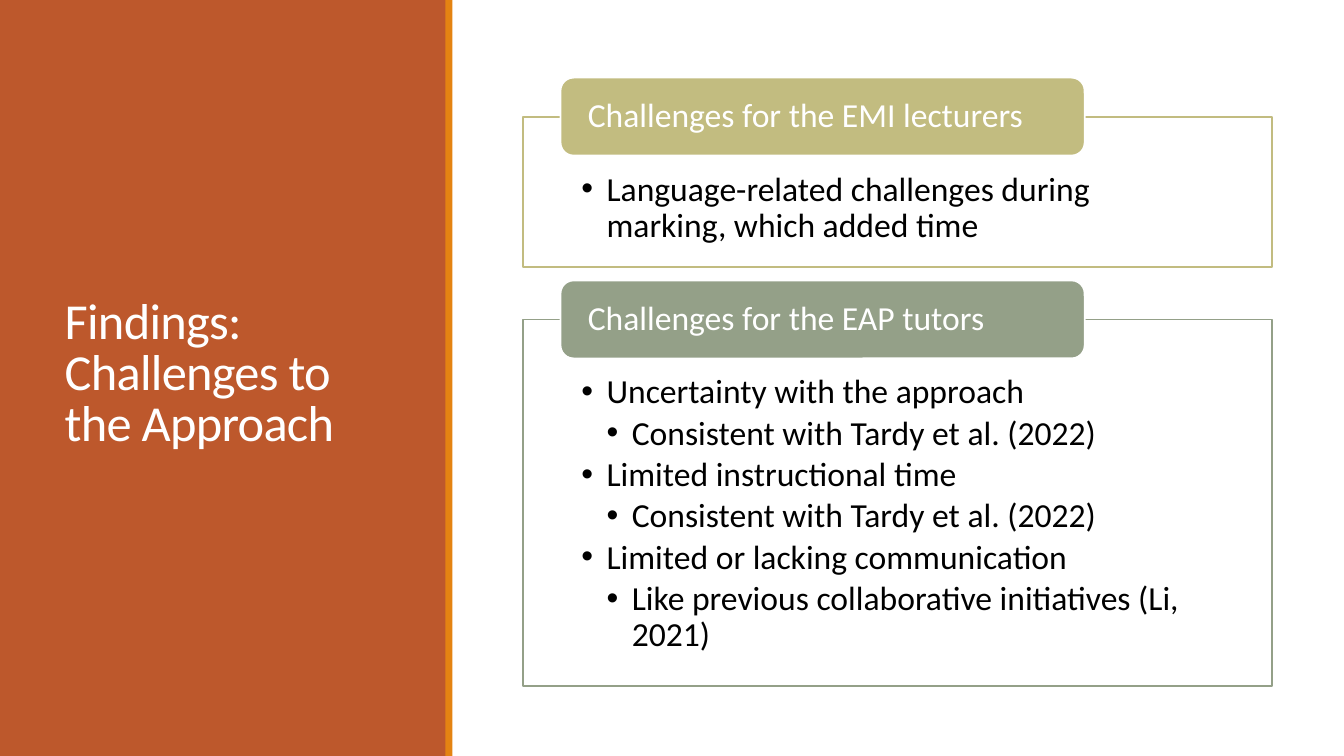
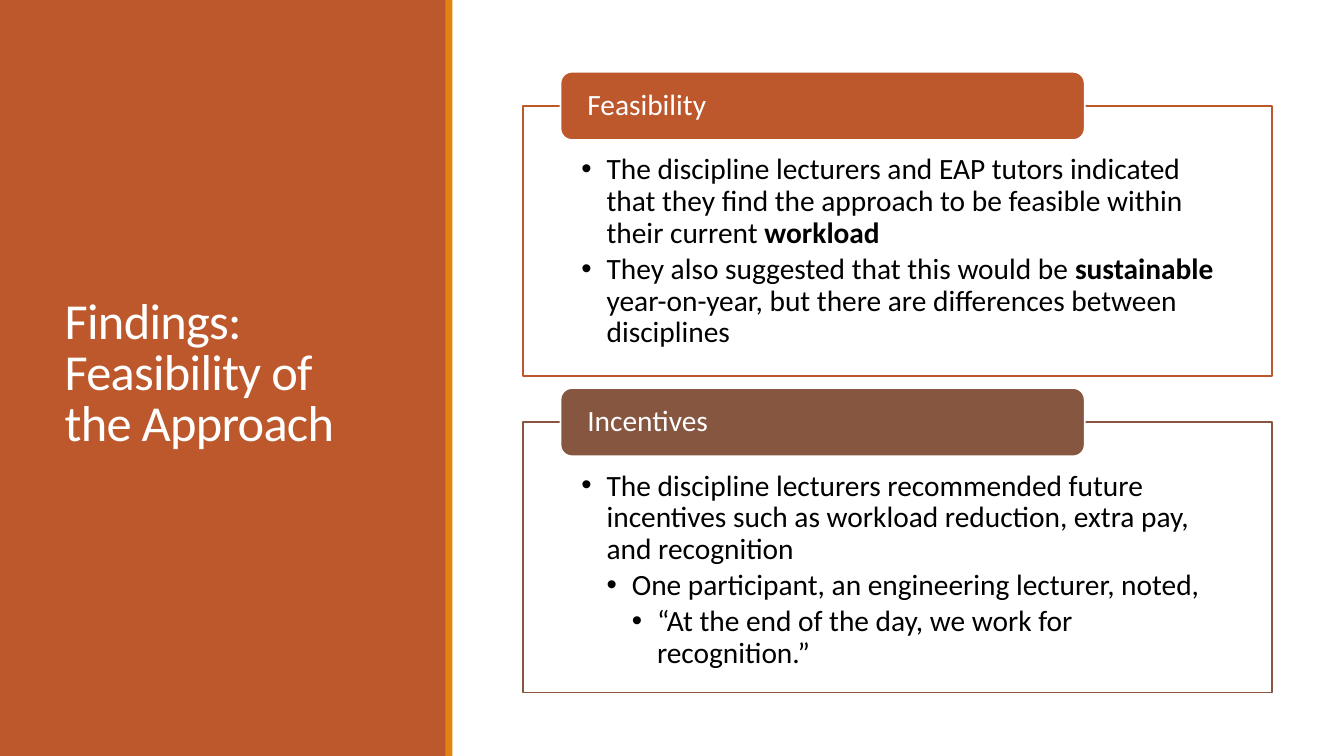
import pptx
import pptx.dml.color
import pptx.enum.shapes
import pptx.enum.text
import pptx.oxml.ns
import pptx.util
from lxml import etree

Pt = pptx.util.Pt
RGBColor = pptx.dml.color.RGBColor
SHAPES = pptx.enum.shapes.MSO_SHAPE
ANCHOR = pptx.enum.text.MSO_ANCHOR

WHITE = RGBColor(0xFF, 0xFF, 0xFF)
BLACK = RGBColor(0x00, 0x00, 0x00)
RUST = RGBColor(0xBD, 0x58, 0x2C)
ORANGE = RGBColor(0xE4, 0x83, 0x12)
KHAKI = RGBColor(0xC2, 0xBC, 0x80)
SAGE = RGBColor(0x94, 0xA0, 0x88)
BROWN = RGBColor(0x86, 0x56, 0x40)


class Deck:
    FONT = "Calibri"
    TITLE_SIZE = 36
    OUTLINE = 1.25
    BOX_LEFT, BOX_WIDTH, BOX_INSET = 373.7, 535, 41.6
    TAB_LEFT, TAB_WIDTH, TAB_INSET = 400.4, 374.4, 16.8
    INDENT = 18
    # Multiples of the text size
    TAB_HEIGHT, BOX_GAP, TOP_INSET, BOTTOM_INSET, ITEM_GAP = 2.32, 1.57, 1.65, 0.57, 0.15

    def __init__(self):
        self.presentation = pptx.Presentation()
        self.presentation.slide_width = Pt(960)
        self.presentation.slide_height = Pt(540)
        self.layout = self.presentation.slide_layouts.get_by_name("Two Content")
        self.slide = None

    def add_slide(self, title):
        is_first = self.slide is None
        self.slide = self.presentation.slides.add_slide(self.layout)
        if is_first:
            self.add_side_panel()
        self.add_title(title)

    def add_side_panel(self):
        """Put the coloured panel on the layout, behind the placeholders of every slide."""
        panel = self.add_shape(SHAPES.RECTANGLE, 0, 0, 319, 540, RUST)
        stripe = self.add_shape(SHAPES.RECTANGLE, 318.2, 0, 5, 540, ORANGE)
        for position, band in enumerate((panel, stripe), start=2):
            self.layout.shapes.element.insert(position, band.element)

    def add_title(self, text):
        title = self.slide.shapes.title
        self.place(title, 39, 41, 242.6, 454)
        frame = title.text_frame
        frame.text = text
        frame.vertical_anchor = ANCHOR.MIDDLE
        frame.auto_size = pptx.enum.text.MSO_AUTO_SIZE.NONE
        paragraph = frame.paragraphs[0]
        self.format_paragraph(paragraph, self.TITLE_SIZE, WHITE, 0.85)
        for run in paragraph.runs:
            run.font.element.set("spc", "-50") if hasattr(run.font, "element") else \
                run.font._element.set("spc", "-50")

    def add_sections(self, top, size, sections):
        """Stack sections given as (heading, colour, box height, items)."""
        boxes = list(self.slide.placeholders)[1:]
        for box, (heading, colour, height, items) in zip(boxes, sections):
            self.add_list_box(box, top, height, size, colour, items)
            self.add_tab(heading, top, size, colour)
            top += height + self.BOX_GAP * size

    def add_list_box(self, box, top, height, size, colour, items):
        """Fill an outlined box with (level, text) items; text between bars is bold."""
        self.place(box, self.BOX_LEFT, top, self.BOX_WIDTH, height)
        self.paint(box, WHITE, colour)
        frame = box.text_frame
        frame.auto_size = pptx.enum.text.MSO_AUTO_SIZE.NONE
        frame.vertical_anchor = ANCHOR.TOP
        self.set_insets(frame, self.BOX_INSET, self.TOP_INSET * size, self.BOTTOM_INSET * size)
        for number, (level, text) in enumerate(items):
            paragraph = frame.add_paragraph() if number else frame.paragraphs[0]
            paragraph.level = level
            for part_number, part in enumerate(text.split("|")):
                if part:
                    run = paragraph.add_run()
                    run.text = part
                    run.font.bold = part_number % 2 == 1
            self.format_paragraph(paragraph, size, BLACK, 0.9)
            paragraph.space_after = Pt(self.ITEM_GAP * size)
            self.add_bullet(paragraph, level)

    def add_bullet(self, paragraph, level):
        properties = paragraph._p.get_or_add_pPr()
        properties.set("marL", str(Pt(self.INDENT * (level + 1))))
        properties.set("indent", str(Pt(-self.INDENT)))
        bullet = etree.SubElement(properties, pptx.oxml.ns.qn("a:buChar"))
        bullet.set("char", "•")

    def add_tab(self, heading, box_top, size, colour):
        """Add a heading centred on the top edge of its box."""
        height = self.TAB_HEIGHT * size
        tab = self.add_shape(SHAPES.ROUNDED_RECTANGLE, self.TAB_LEFT, box_top - height / 2,
                             self.TAB_WIDTH, height, colour, WHITE)
        frame = tab.text_frame
        frame.text = heading
        frame.word_wrap = True
        frame.vertical_anchor = ANCHOR.MIDDLE
        self.set_insets(frame, self.TAB_INSET, 0, 0)
        self.format_paragraph(frame.paragraphs[0], size, WHITE, 0.9)

    def add_shape(self, preset, left, top, width, height, fill, outline=None):
        shape = self.slide.shapes.add_shape(preset, Pt(left), Pt(top), Pt(width), Pt(height))
        shape.shadow.inherit = False
        self.paint(shape, fill, outline)
        return shape

    def paint(self, shape, fill, outline):
        shape.fill.solid()
        shape.fill.fore_color.rgb = fill
        if outline is None:
            shape.line.fill.background()
        else:
            shape.line.color.rgb = outline
            shape.line.width = Pt(self.OUTLINE)

    def format_paragraph(self, paragraph, size, colour, line_spacing):
        paragraph.alignment = pptx.enum.text.PP_ALIGN.LEFT
        paragraph.line_spacing = line_spacing
        paragraph.space_before = Pt(0)
        for run in paragraph.runs:
            run.font.name = self.FONT
            run.font.size = Pt(size)
            run.font.color.rgb = colour

    @staticmethod
    def place(shape, left, top, width, height):
        shape.left, shape.top = Pt(left), Pt(top)
        shape.width, shape.height = Pt(width), Pt(height)

    @staticmethod
    def set_insets(frame, side, top, bottom):
        frame.margin_left = frame.margin_right = Pt(side)
        frame.margin_top, frame.margin_bottom = Pt(top), Pt(bottom)


def main():
    deck = Deck()

    deck.add_slide("Findings: Challenges to the Approach")
    deck.add_sections(83.3, 24, [
        ("Challenges for the EMI lecturers", KHAKI, 107.2, [
            (0, "Language-related challenges during marking, which added time"),
        ]),
        ("Challenges for the EAP tutors", SAGE, 262, [
            (0, "Uncertainty with the approach"),
            (1, "Consistent with Tardy et al. (2022)"),
            (0, "Limited instructional time"),
            (1, "Consistent with Tardy et al. (2022)"),
            (0, "Limited or lacking communication"),
            (1, "Like previous collaborative initiatives (Li, 2021)"),
        ]),
    ])

    deck.add_slide("Findings: Feasibility of the Approach")
    deck.add_sections(75.6, 21, [
        ("Feasibility", RUST, 193, [
            (0, "The discipline lecturers and EAP tutors indicated that they find the approach "
                "to be feasible within their current |workload|"),
            (0, "They also suggested that this would be |sustainable| year-on-year, "
                "but there are differences between disciplines"),
        ]),
        ("Incentives", BROWN, 193, [
            (0, "The discipline lecturers recommended future incentives such as "
                "workload reduction, extra pay, and recognition"),
            (1, "One participant, an engineering lecturer, noted,"),
            (2, "“At the end of the day, we work for recognition.”"),
        ]),
    ])

    deck.presentation.save("out.pptx")


if __name__ == "__main__":
    main()
